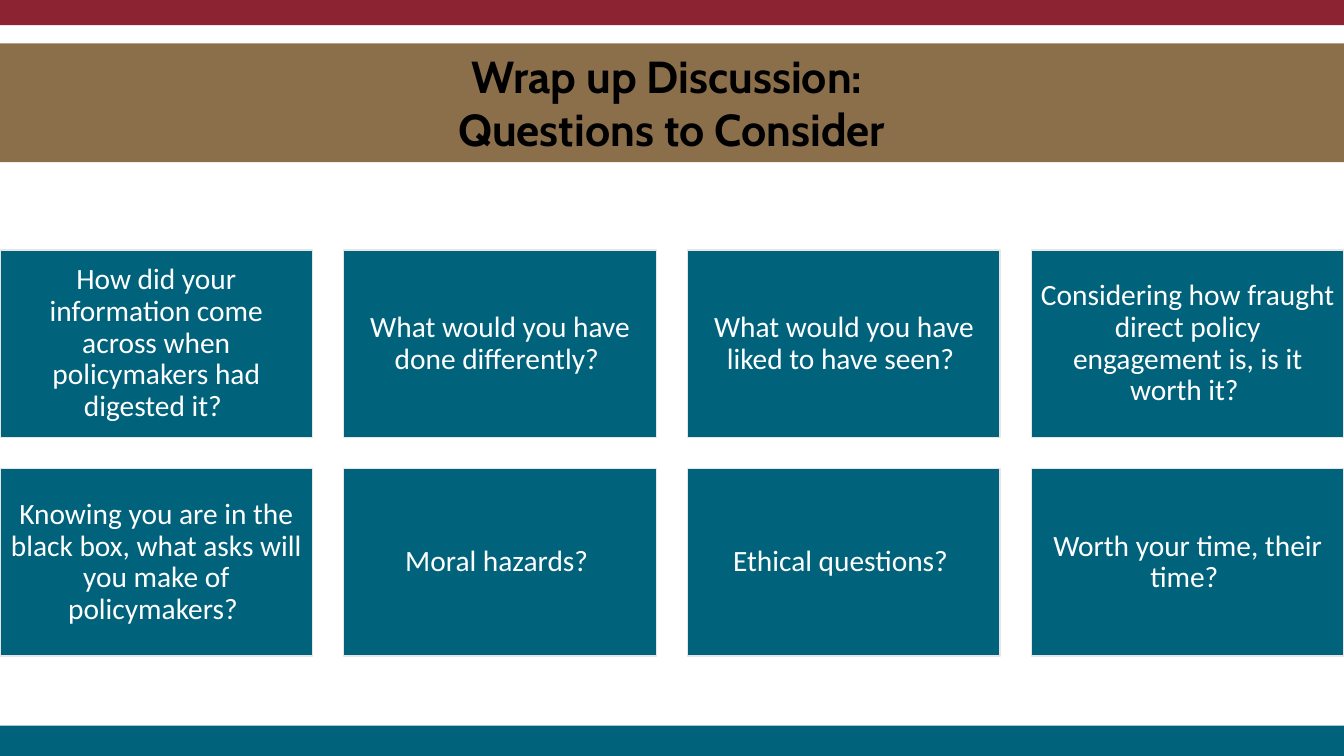
from pptx import Presentation, util as u
from pptx.dml.color import RGBColor
from pptx.enum import shapes, text

WIDTH, HEIGHT = 13.33, 7.5
RED, TEAL, BROWN, PALE = "8B2332", "00637B", "8B6F4B", "E7E6E6"

TITLE = ["Wrap up Discussion: ", "Questions to Consider"]
QUESTIONS = [
    ["How did your information come across when policymakers had digested it? ",
     "What would you have done differently? ",
     "What would you have liked to have seen? ",
     "Considering how fraught direct policy engagement is, is it worth it? "],
    ["Knowing you are in the black box, what asks will you make of policymakers? ",
     "Moral hazards? ",
     "Ethical questions? ",
     "Worth your time, their time? "],
]
TITLE_FONT = {"name": "Cabin", "size": u.Pt(32), "bold": True}
CARD_FONT = {"name": "Calibri", "size": u.Pt(21), "bold": False}

# Four cards and three gaps, each a tenth of a card, span the slide
COLUMNS = len(QUESTIONS[0])
CARD_W = WIDTH / (COLUMNS + 0.1 * (COLUMNS - 1))
CARD_H = 0.6 * CARD_W
GAP = 0.1 * CARD_W
CARDS_TOP = 2.48
CARD_INSET = 0.09


def color(value):
    return RGBColor.from_string(value)


def add_box(slide, left, top, width, height, fill, outline=None):
    box = slide.shapes.add_shape(shapes.MSO_SHAPE.RECTANGLE,
                                 *map(u.Inches, (left, top, width, height)))
    box.shadow.inherit = False
    box.fill.solid()
    box.fill.fore_color.rgb = color(fill)
    if outline:
        box.line.color.rgb = color(outline)
        box.line.width = u.Pt(1)
    else:
        box.line.fill.background()
    return box


def write(box, lines, font, ink, spacing, frame_format):
    frame = box.text_frame
    for key, value in frame_format.items():
        setattr(frame, key, value)
    for index, line in enumerate(lines):
        paragraph = frame.add_paragraph() if index else frame.paragraphs[0]
        paragraph.alignment = text.PP_ALIGN.CENTER
        paragraph.line_spacing = spacing
        run = paragraph.add_run()
        run.text = line
        for key, value in font.items():
            setattr(run.font, key, value)
        run.font.color.rgb = color(ink)


def main():
    deck = Presentation()
    deck.slide_width, deck.slide_height = u.Inches(WIDTH), u.Inches(HEIGHT)
    slide = deck.slides.add_slide(deck.slide_layouts[6])

    add_box(slide, 0, 0, WIDTH, 0.25, RED)
    add_box(slide, 0, HEIGHT - 0.3, WIDTH, 0.3, TEAL)
    banner = add_box(slide, 0, 0.43, WIDTH, 1.18, BROWN)
    write(banner, TITLE, TITLE_FONT, "000000", 1.0,
          {"word_wrap": True, "vertical_anchor": text.MSO_ANCHOR.TOP})

    margins = {f"margin_{side}": u.Inches(CARD_INSET)
               for side in ("left", "top", "right", "bottom")}
    card_format = {"word_wrap": True,
                   "vertical_anchor": text.MSO_ANCHOR.MIDDLE, **margins}
    for row, questions in enumerate(QUESTIONS):
        for column, question in enumerate(questions):
            card = add_box(slide, column * (CARD_W + GAP),
                           CARDS_TOP + row * (CARD_H + GAP),
                           CARD_W, CARD_H, TEAL, PALE)
            write(card, [question], CARD_FONT, "FFFFFF", 0.9, card_format)

    deck.save("out.pptx")


if __name__ == "__main__":
    main()
